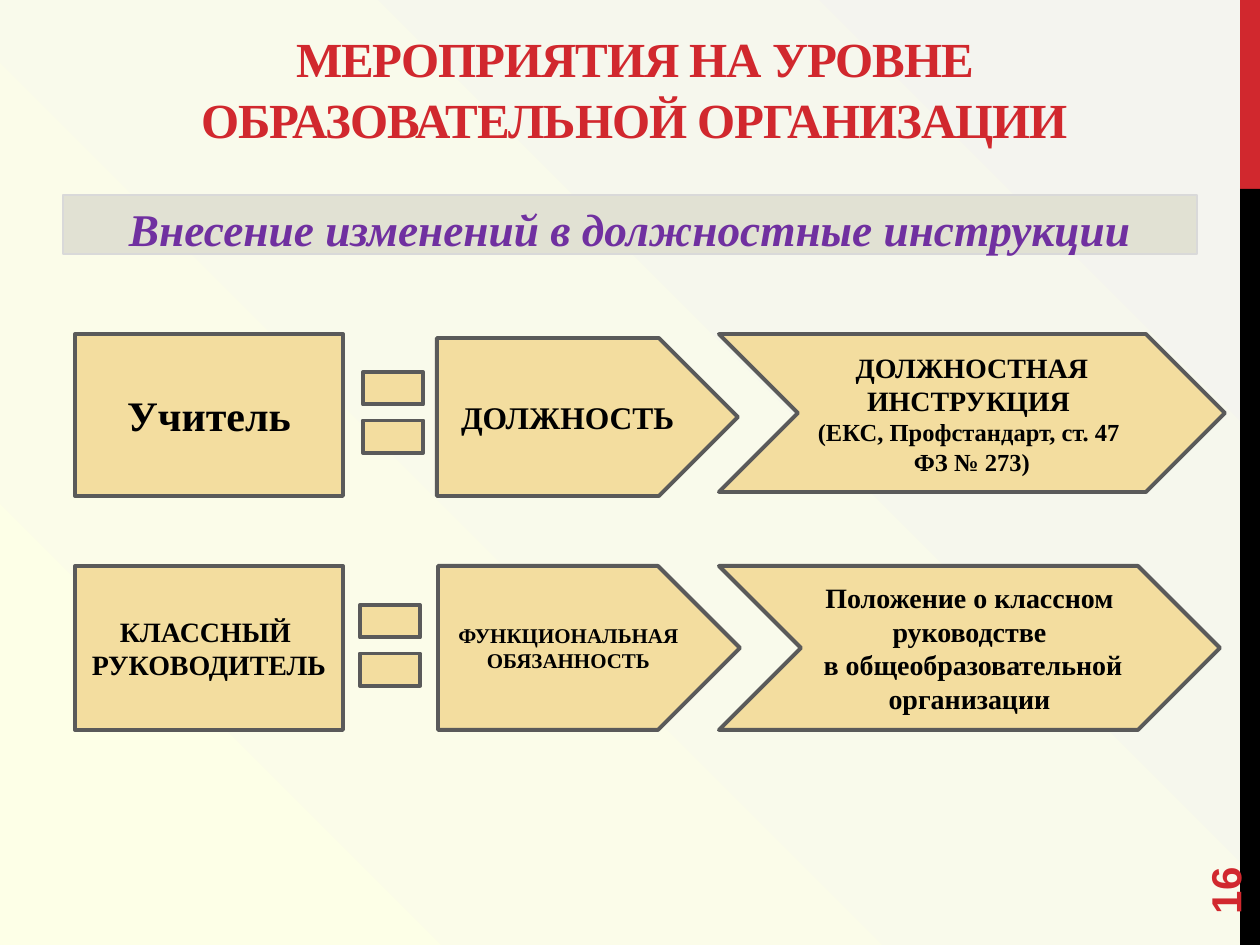
from dataclasses import dataclass
from typing import Optional

from pptx import Presentation
from pptx.dml.color import RGBColor
from pptx.enum.shapes import MSO_SHAPE as Preset
from pptx.enum.text import MSO_ANCHOR as Anchor, MSO_AUTO_SIZE as AutoSize, PP_ALIGN as Align
from pptx.util import Emu, Pt

EMU_PER_PX = 914400 / 126

RED = RGBColor(0xD1, 0x28, 0x2E)
BLACK = RGBColor(0x00, 0x00, 0x00)
PURPLE = RGBColor(0x70, 0x30, 0xA0)
SAND = RGBColor(0xF3, 0xDD, 0x9F)
GREY = RGBColor(0x5A, 0x5A, 0x5A)
BAND = RGBColor(0xE1, 0xE1, 0xD3)
BAND_EDGE = RGBColor(0xD9, 0xD9, 0xD9)
PAGE_WARM = RGBColor(0xFD, 0xFF, 0xE7)
PAGE_COOL = RGBColor(0xF4, 0xF4, 0xEF)

SERIF = "Times New Roman"
SANS = "Arial"


@dataclass(frozen=True)
class Span:
    text: str
    size: float
    color: RGBColor = BLACK
    font: str = SERIF
    italic: bool = False


@dataclass(frozen=True)
class Box:
    preset: Preset
    left: int
    top: int
    width: int
    height: int
    paras: tuple[tuple[Span, ...], ...] = ()
    fill: RGBColor = SAND
    line: Optional[RGBColor] = GREY
    weight: float = 2.25


def px(value: int) -> Emu:
    return Emu(round(value * EMU_PER_PX))


def place(shape, left: int, top: int, width: int, height: int) -> None:
    shape.left, shape.top = px(left), px(top)
    shape.width, shape.height = px(width), px(height)


def write(frame, paras: tuple[tuple[Span, ...], ...], align: Align = Align.CENTER) -> None:
    frame.word_wrap = True
    frame.auto_size = AutoSize.NONE
    for index, spans in enumerate(paras):
        para = frame.add_paragraph() if index else frame.paragraphs[0]
        para.alignment = align
        for span in spans:
            run = para.add_run()
            run.text = span.text
            font = run.font
            font.name, font.size = span.font, Pt(span.size)
            font.bold, font.italic = True, span.italic
            font.color.rgb = span.color


def draw_box(page, box: Box):
    shape = page.shapes.add_shape(
        box.preset, px(box.left), px(box.top), px(box.width), px(box.height))
    shape.shadow.inherit = False
    shape.fill.solid()
    shape.fill.fore_color.rgb = box.fill
    if box.line is None:
        shape.line.fill.background()
    else:
        shape.line.color.rgb = box.line
        shape.line.width = Pt(box.weight)
    if box.paras:
        shape.text_frame.vertical_anchor = Anchor.MIDDLE
        write(shape.text_frame, box.paras)
    return shape


def paint_background(page) -> None:
    fill = page.background.fill
    fill.gradient()
    fill.gradient_angle = 45
    for stop, color in zip(fill.gradient_stops, (PAGE_WARM, PAGE_COOL)):
        stop.color.rgb = color


def draw_title(page) -> None:
    title = page.shapes.title
    place(title, 63, 45, 1143, 110)
    frame = title.text_frame
    frame.vertical_anchor = Anchor.BOTTOM
    write(frame, ((Span("МЕРОПРИЯТИЯ НА УРОВНЕ ОБРАЗОВАТЕЛЬНОЙ ОРГАНИЗАЦИИ", 28, RED),),))
    para = frame.paragraphs[0]
    para.line_spacing = 1.05
    para.runs[0].font._element.set("spc", "-60")


def draw_subtitle(page) -> None:
    span = Span("Внесение изменений в должностные инструкции", 25.9, PURPLE, italic=True)
    band = draw_box(page, Box(Preset.RECTANGLE, 63, 195, 1134, 59, ((span,),),
                              BAND, BAND_EDGE, 0.75))
    band.text_frame.vertical_anchor = Anchor.TOP
    band.text_frame.paragraphs[0].space_before = Pt(4)


def draw_page_number(page) -> None:
    number = page.shapes.add_textbox(px(1134), px(811), px(181), px(50))
    number.rotation = 270
    number.text_frame.vertical_anchor = Anchor.MIDDLE
    write(number.text_frame, ((Span("16", 24, RED, SANS),),), Align.LEFT)


SIDE_BARS = (
    Box(Preset.RECTANGLE, 1240, 0, 20, 189, fill=RED, line=None),
    Box(Preset.RECTANGLE, 1240, 189, 20, 756, fill=BLACK, line=None),
)

TEACHER_ROW = (
    Box(Preset.RECTANGLE, 75, 334, 268, 162, ((Span("Учитель", 24),),)),
    Box(Preset.MATH_EQUAL, 352, 344, 82, 137),
    Box(Preset.PENTAGON, 437, 338, 301, 158, ((Span("ДОЛЖНОСТЬ", 18),),)),
    Box(Preset.CHEVRON, 719, 334, 506, 158, (
        (Span("ДОЛЖНОСТНАЯ ИНСТРУКЦИЯ", 16), Span(" ", 14, font=SANS)),
        (Span("(ЕКС, Профстандарт, ст. 47 ", 14),),
        (Span("ФЗ № 273)", 14),),
    )),
)

CLASS_LEADER_ROW = (
    Box(Preset.RECTANGLE, 75, 566, 268, 164, (
        (Span("КЛАССНЫЙ ", 16),),
        (Span("РУКОВОДИТЕЛЬ", 16),),
    )),
    Box(Preset.MATH_EQUAL, 349, 577, 82, 137),
    Box(Preset.PENTAGON, 438, 566, 302, 164, ((Span("ФУНКЦИОНАЛЬНАЯ ОБЯЗАННОСТЬ", 12),),)),
    Box(Preset.CHEVRON, 719, 566, 501, 164, (
        (Span("Положение о классном руководстве", 16),),
        (Span(" в общеобразовательной организации", 16),),
    )),
)


def main() -> None:
    deck = Presentation()
    deck.slide_width, deck.slide_height = px(1260), px(945)
    page = deck.slides.add_slide(deck.slide_layouts[5])
    paint_background(page)
    for bar in SIDE_BARS:
        draw_box(page, bar)
    draw_title(page)
    draw_page_number(page)
    draw_subtitle(page)
    for box in TEACHER_ROW + CLASS_LEADER_ROW:
        draw_box(page, box)
    deck.save("out.pptx")


if __name__ == "__main__":
    main()
